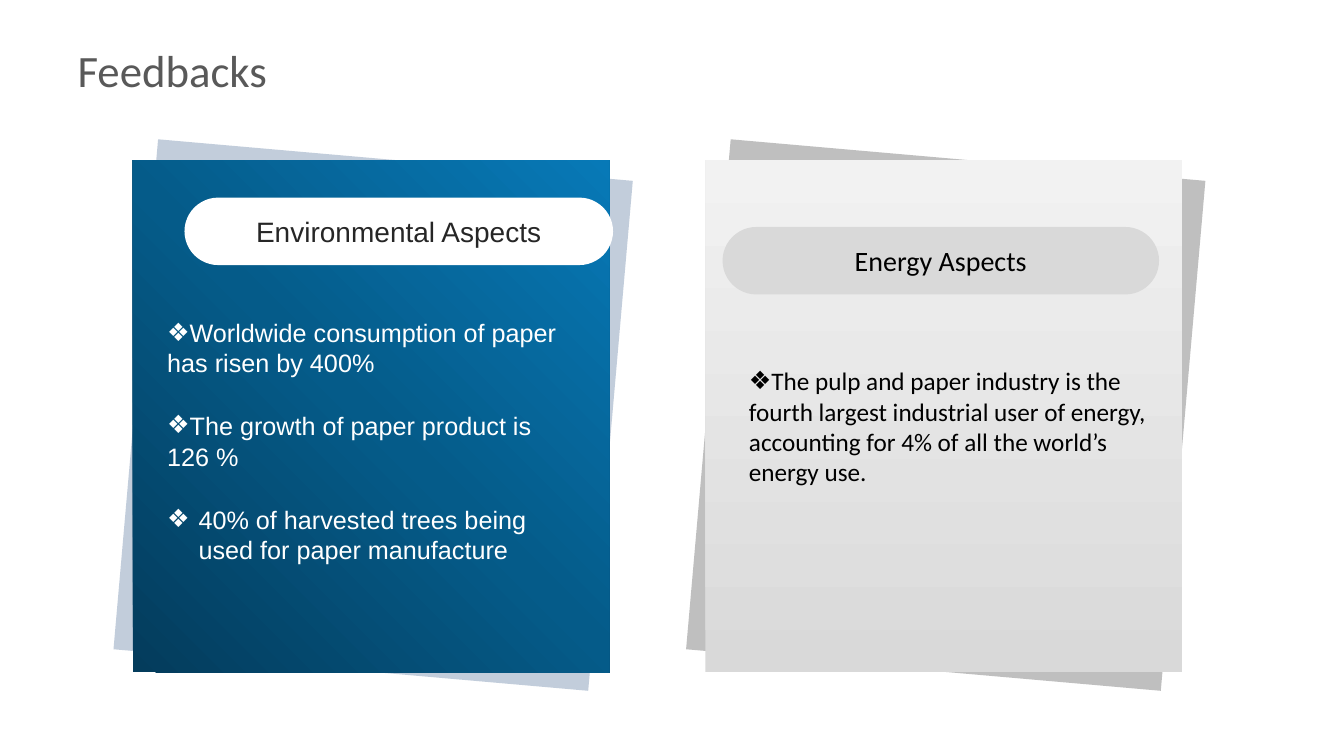
from lxml import etree
from pptx import Presentation
from pptx.dml.color import RGBColor
from pptx.enum.shapes import MSO_SHAPE
from pptx.enum.text import MSO_ANCHOR, MSO_AUTO_SIZE, PP_ALIGN
from pptx.oxml.ns import qn
from pptx.util import Cm, Pt

RECT, PILL = MSO_SHAPE.RECTANGLE, MSO_SHAPE.ROUNDED_RECTANGLE
LEFT, CENTER = PP_ALIGN.LEFT, PP_ALIGN.CENTER
TOP, MIDDLE = MSO_ANCHOR.TOP, MSO_ANCHOR.MIDDLE
NO_AUTOFIT = MSO_AUTO_SIZE.NONE

WHITE = RGBColor(0xFF, 0xFF, 0xFF)
BLACK = RGBColor(0x00, 0x00, 0x00)
CHARCOAL = RGBColor(0x26, 0x26, 0x26)
TITLE_GRAY = RGBColor(0x59, 0x59, 0x59)
NAVY = RGBColor(0x1F, 0x49, 0x7D)
SHEET_GRAY = RGBColor(0xBF, 0xBF, 0xBF)
PALE_GRAY = RGBColor(0xD9, 0xD9, 0xD9)
LIGHT_GRAY = RGBColor(0xF2, 0xF2, 0xF2)
DEEP_BLUE = RGBColor(0x04, 0x3C, 0x5C)
MID_BLUE = RGBColor(0x05, 0x5B, 0x89)
BRIGHT_BLUE = RGBColor(0x07, 0x79, 0xB7)

TWO_CONTENT = 3
CARD_TOP, CARD_WIDTH, CARD_HEIGHT = 4.04, 12.01, 12.9
SHEET_TILT = 5
HANGING = Cm(0.79)
ITEM_GAP = 23

# Each item: text, bulleted, hanging, space before in points
ENVIRONMENT_ITEMS = [
    ("Worldwide consumption of paper has risen by 400%", True, False, 1),
    ("The growth of paper product is", True, False, ITEM_GAP),
    ("126 %", False, False, 1),
    ("40% of harvested trees being used for paper manufacture", True, True, ITEM_GAP),
]
ENERGY_ITEMS = [
    ("The pulp and paper industry is the fourth largest industrial user of energy, "
     "accounting for 4% of all the world’s energy use.", True, False, 1),
]

CARDS = [
    {"left": 3.35, "sheet": (NAVY, 27), "stops": [DEEP_BLUE, MID_BLUE, BRIGHT_BLUE],
     "angle": 45, "heading": "Environmental Aspects", "pill": (4.65, 4.98, 10.8, 1.7),
     "pill_fill": WHITE, "heading_color": CHARCOAL, "font": "Arial",
     "items": ENVIRONMENT_ITEMS, "list": (3.96, 7.87, 10.8, 7.39), "list_color": WHITE},
    {"left": 17.78, "sheet": (SHEET_GRAY, 100), "stops": [PALE_GRAY, LIGHT_GRAY],
     "angle": 90, "heading": "Energy Aspects", "pill": (18.21, 5.72, 11, 1.7),
     "pill_fill": PALE_GRAY, "heading_color": BLACK, "font": "Calibri",
     "items": ENERGY_ITEMS, "list": (18.62, 9.09, 10.59, 4.14), "list_color": BLACK},
]


def apply(target, formats):
    for name, value in formats.items():
        setattr(target, name, value)


class FeedbackSlide:
    def __init__(self, presentation):
        self.slide = presentation.slides.add_slide(presentation.slide_layouts[TWO_CONTENT])
        self.slide.background.fill.solid()
        self.slide.background.fill.fore_color.rgb = WHITE

    def place(self, shape, box):
        apply(shape, dict(zip(("left", "top", "width", "height"), map(Cm, box))))

    def add_text(self, paragraph, text, font, size, color, align=LEFT):
        paragraph.alignment = align
        run = paragraph.add_run()
        run.text = text
        apply(run.font, {"name": font, "size": Pt(size), "bold": False})
        run.font.color.rgb = color

    def title(self, text, box):
        title = self.slide.shapes.title
        self.place(title, box)
        apply(title.text_frame, {"vertical_anchor": MIDDLE, "auto_size": NO_AUTOFIT})
        self.add_text(title.text_frame.paragraphs[0], text, "Calibri", 32, TITLE_GRAY)

    def block(self, kind, box):
        block = self.slide.shapes.add_shape(kind, *map(Cm, box))
        block.shadow.inherit = False
        block.line.fill.background()
        return block

    def sheet(self, box, color, opacity):
        sheet = self.block(RECT, box)
        sheet.rotation = SHEET_TILT
        sheet.fill.solid()
        sheet.fill.fore_color.rgb = color
        if opacity < 100:
            tint = sheet._element.spPr.find(".//" + qn("a:srgbClr"))
            etree.SubElement(tint, qn("a:alpha"), val=str(opacity * 1000))

    def card(self, box, colors, angle):
        card = self.block(RECT, box)
        card.fill.gradient()
        card.fill.gradient_angle = angle
        stops = card._element.spPr.find(".//" + qn("a:gsLst"))
        for stop in list(stops):
            stops.remove(stop)
        for i, color in enumerate(colors):
            position = 100000 * i // (len(colors) - 1)
            stop = etree.SubElement(stops, qn("a:gs"), pos=str(position))
            etree.SubElement(stop, qn("a:srgbClr"), val=str(color))

    def pill(self, text, box, fill, font, color):
        pill = self.block(PILL, box)
        pill.adjustments[0] = 0.5
        pill.fill.solid()
        pill.fill.fore_color.rgb = fill
        apply(pill.text_frame, {"vertical_anchor": MIDDLE, "word_wrap": True})
        self.add_text(pill.text_frame.paragraphs[0], text, font, 20, color, CENTER)

    def bullet_list(self, placeholder, items, box, font, color):
        self.place(placeholder, box)
        # Bring the list in front of its card
        self.slide.shapes._spTree.append(placeholder._element)
        frame = placeholder.text_frame
        apply(frame, {"vertical_anchor": TOP, "auto_size": NO_AUTOFIT, "word_wrap": True})
        for i, (text, bulleted, hanging, before) in enumerate(items):
            paragraph = frame.add_paragraph() if i else frame.paragraphs[0]
            self.add_text(paragraph, text, font, 18, color)
            apply(paragraph, {"space_before": Pt(before), "line_spacing": 1.0})
            indent = HANGING if hanging else 0
            properties = paragraph._p.get_or_add_pPr()
            properties.set("marL", str(indent))
            properties.set("indent", str(-indent))
            if bulleted:
                etree.SubElement(properties, qn("a:buChar"), char="❖")
            else:
                etree.SubElement(properties, qn("a:buNone"))


def main():
    presentation = Presentation()
    apply(presentation, {"slide_width": Cm(33.87), "slide_height": Cm(19.05)})
    feedback = FeedbackSlide(presentation)
    feedback.title("Feedbacks", (1.7, 0.76, 30.48, 1.98))
    list_holders = list(feedback.slide.placeholders)[1:]
    for aspect, holder in zip(CARDS, list_holders):
        left, font = aspect["left"], aspect["font"]
        size = (CARD_WIDTH, CARD_HEIGHT)
        feedback.sheet((left + 0.05, CARD_TOP - 0.03, *size), *aspect["sheet"])
        feedback.card((left, CARD_TOP, *size), aspect["stops"], aspect["angle"])
        feedback.bullet_list(holder, aspect["items"], aspect["list"], font, aspect["list_color"])
        feedback.pill(aspect["heading"], aspect["pill"], aspect["pill_fill"],
                      font, aspect["heading_color"])
    presentation.save("out.pptx")


if __name__ == "__main__":
    main()
